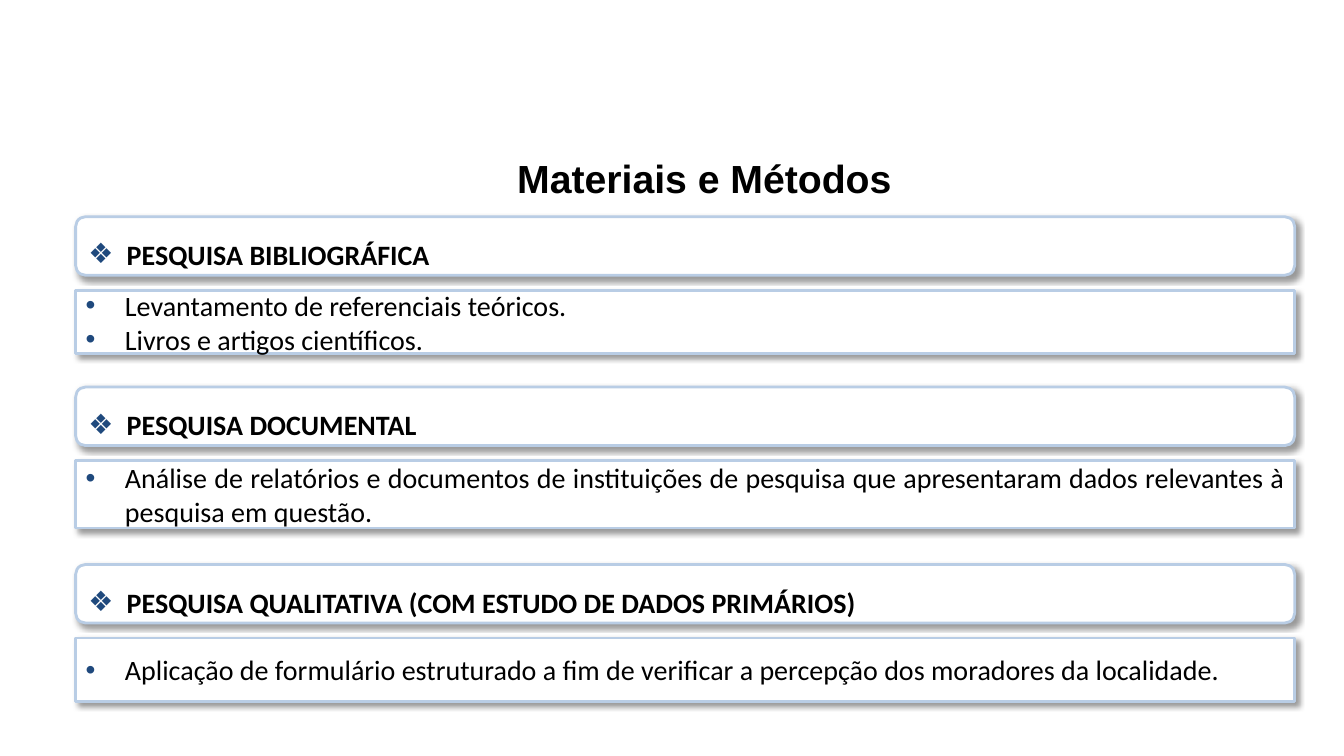
from dataclasses import dataclass

from lxml.etree import SubElement
from pptx import Presentation
from pptx.dml.color import RGBColor
from pptx.enum.shapes import MSO_SHAPE
from pptx.enum.text import MSO_ANCHOR, MSO_AUTO_SIZE, PP_ALIGN
from pptx.oxml.ns import qn
from pptx.shapes.autoshape import Shape
from pptx.slide import Slide
from pptx.text.text import _Paragraph as Paragraph
from pptx.util import Inches, Pt

SLIDE_WIDTH = Inches(13.33)
SLIDE_HEIGHT = Inches(7.5)


@dataclass(frozen=True)
class Theme:
    background: str = "FFFFFF"
    text: str = "000000"
    border: str = "B9CDE5"
    bullet: str = "1F497D"
    shadow: str = "000000"
    title_font: str = "Arial"
    body_font: str = "Calibri"
    title_size: int = 28
    body_size: int = 20
    border_width: int = 2


@dataclass(frozen=True)
class Box:
    left: float
    top: float
    width: float
    height: float

    def place(self, shape: Shape) -> None:
        shape.left = round(SLIDE_WIDTH * self.left / 100)
        shape.top = round(SLIDE_HEIGHT * self.top / 100)
        shape.width = round(SLIDE_WIDTH * self.width / 100)
        shape.height = round(SLIDE_HEIGHT * self.height / 100)


@dataclass(frozen=True)
class CardStyle:
    outline: MSO_SHAPE
    bullet: str
    indent: float
    line_spacing: float
    bold: bool


@dataclass(frozen=True)
class Section:
    top: float
    heading: str
    items: tuple[str, ...]
    items_height: float


THEME = Theme()
HEADING = CardStyle(MSO_SHAPE.ROUNDED_RECTANGLE, "❖", 0.38, 1.5, True)
DETAILS = CardStyle(MSO_SHAPE.RECTANGLE, "•", 0.39, 1.0, False)

TITLE_BOX = Box(37.73, 19.73, 30.53, 7.6)
CARD_LEFT = 5.63
CARD_WIDTH = 90.7
HEADING_HEIGHT = 7.73
DETAILS_OFFSET = 9.73

SECTIONS = (
    Section(
        28.67,
        "PESQUISA BIBLIOGRÁFICA",
        ("Levantamento de referenciais teóricos.", "Livros e artigos científicos."),
        8.4,
    ),
    Section(
        51.2,
        "PESQUISA DOCUMENTAL",
        (
            "Análise de relatórios e documentos de instituições de pesquisa que "
            "apresentaram dados relevantes à pesquisa em questão.",
        ),
        8.93,
    ),
    Section(
        74.67,
        "PESQUISA QUALITATIVA (COM ESTUDO DE DADOS PRIMÁRIOS)",
        (
            "Aplicação de formulário estruturado a fim de verificar a percepção "
            "dos moradores da localidade.",
        ),
        8.4,
    ),
)


def rgb(color: str) -> RGBColor:
    return RGBColor.from_string(color)


def format_runs(paragraph: Paragraph, font_name: str, size: int, bold: bool) -> None:
    for run in paragraph.runs:
        run.font.name = font_name
        run.font.size = Pt(size)
        run.font.bold = bold
        run.font.color.rgb = rgb(THEME.text)


def add_bullet(paragraph: Paragraph, character: str, indent: float) -> None:
    properties = paragraph._p.get_or_add_pPr()
    properties.set("marL", str(Inches(indent)))
    properties.set("indent", str(-Inches(indent)))
    bullet_color = SubElement(properties, qn("a:buClr"))
    SubElement(bullet_color, qn("a:srgbClr"), val=THEME.bullet)
    SubElement(properties, qn("a:buFont"), typeface=THEME.title_font)
    SubElement(properties, qn("a:buChar"), char=character)


def add_shadow(shape: Shape) -> None:
    shape.shadow.inherit = False
    effects = shape._element.spPr.find(qn("a:effectLst"))
    shadow = SubElement(
        effects,
        qn("a:outerShdw"),
        blurRad=str(Pt(4)),
        dist=str(Pt(3)),
        dir=str(45 * 60000),
        algn="tl",
        rotWithShape="0",
    )
    color = SubElement(shadow, qn("a:srgbClr"), val=THEME.shadow)
    SubElement(color, qn("a:alpha"), val="40000")


def add_card(slide: Slide, box: Box, style: CardStyle, lines: tuple[str, ...]) -> None:
    card = slide.shapes.add_shape(style.outline, 0, 0, 0, 0)
    box.place(card)
    card.fill.solid()
    card.fill.fore_color.rgb = rgb(THEME.background)
    card.line.color.rgb = rgb(THEME.border)
    card.line.width = Pt(THEME.border_width)
    add_shadow(card)
    text_frame = card.text_frame
    text_frame.word_wrap = True
    text_frame.vertical_anchor = MSO_ANCHOR.MIDDLE
    text_frame.text = "\n".join(lines)
    for paragraph in text_frame.paragraphs:
        add_bullet(paragraph, style.bullet, style.indent)
        paragraph.alignment = PP_ALIGN.JUSTIFY
        paragraph.line_spacing = style.line_spacing
        format_runs(paragraph, THEME.body_font, THEME.body_size, style.bold)


def add_title(slide: Slide, text: str) -> None:
    title = slide.shapes.title
    TITLE_BOX.place(title)
    text_frame = title.text_frame
    text_frame.text = text
    text_frame.word_wrap = False
    text_frame.auto_size = MSO_AUTO_SIZE.SHAPE_TO_FIT_TEXT
    text_frame.vertical_anchor = MSO_ANCHOR.TOP
    paragraph = text_frame.paragraphs[0]
    paragraph.alignment = PP_ALIGN.LEFT
    format_runs(paragraph, THEME.title_font, THEME.title_size, True)


def add_section(slide: Slide, section: Section) -> None:
    heading_box = Box(CARD_LEFT, section.top, CARD_WIDTH, HEADING_HEIGHT)
    details_top = section.top + DETAILS_OFFSET
    details_box = Box(CARD_LEFT, details_top, CARD_WIDTH, section.items_height)
    add_card(slide, heading_box, HEADING, (section.heading,))
    add_card(slide, details_box, DETAILS, section.items)


def main() -> None:
    presentation = Presentation()
    presentation.slide_width = SLIDE_WIDTH
    presentation.slide_height = SLIDE_HEIGHT
    slide = presentation.slides.add_slide(presentation.slide_layouts.get_by_name("Title Only"))
    slide.background.fill.solid()
    slide.background.fill.fore_color.rgb = rgb(THEME.background)
    add_title(slide, "Materiais e Métodos")
    for section in SECTIONS:
        add_section(slide, section)
    presentation.save("out.pptx")


if __name__ == "__main__":
    main()
